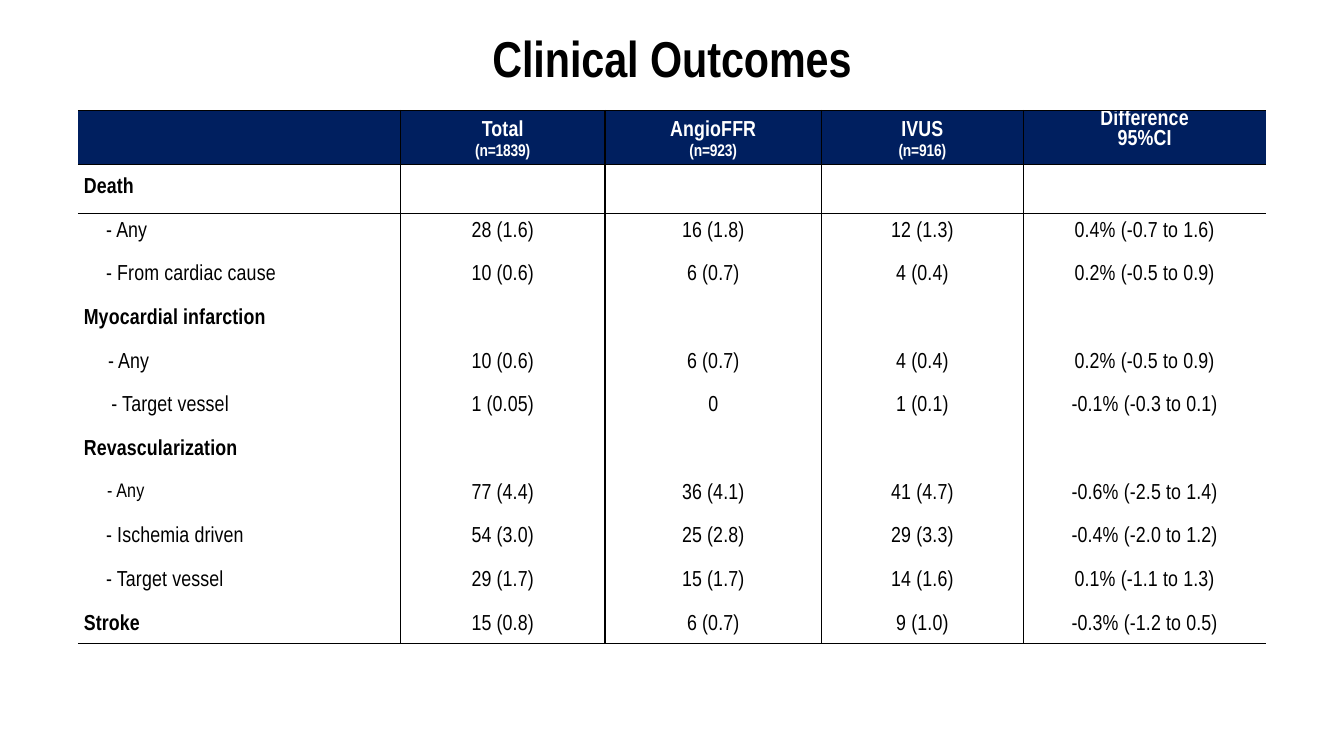
from lxml import etree
from pptx import Presentation
from pptx.dml.color import RGBColor as Rgb
from pptx.enum.text import MSO_ANCHOR as Anchor, PP_ALIGN as Align
from pptx.oxml.ns import qn
from pptx.util import Pt

# Content
TITLE = "Clinical Outcomes"
HEADERS = [
    (),
    ("Total", "(n=1839)"),
    ("AngioFFR", "(n=923)"),
    ("IVUS", "(n=916)"),
    ("Difference", "95%CI"),
]
# Label, label indent, label size, values; a label at GROUP indent is bold
GROUP, ITEM = 4.3, 20.2
BODY_SIZE = 15.5
ROWS = [
    ("Death", GROUP, BODY_SIZE, ()),
    ("- Any", ITEM, BODY_SIZE, ("28 (1.6)", "16 (1.8)", "12 (1.3)", "0.4% (-0.7 to 1.6)")),
    ("- From cardiac cause", ITEM, BODY_SIZE, ("10 (0.6)", "6 (0.7)", "4 (0.4)", "0.2% (-0.5 to 0.9)")),
    ("Myocardial infarction", GROUP, BODY_SIZE, ()),
    ("- Any", 21.6, BODY_SIZE, ("10 (0.6)", "6 (0.7)", "4 (0.4)", "0.2% (-0.5 to 0.9)")),
    ("- Target vessel", 24, BODY_SIZE, ("1 (0.05)", "0", "1 (0.1)", "-0.1% (-0.3 to 0.1)")),
    ("Revascularization", GROUP, BODY_SIZE, ()),
    ("- Any", 20.9, 14, ("77 (4.4)", "36 (4.1)", "41 (4.7)", "-0.6% (-2.5 to 1.4)")),
    ("- Ischemia driven", ITEM, BODY_SIZE, ("54 (3.0)", "25 (2.8)", "29 (3.3)", "-0.4% (-2.0 to 1.2)")),
    ("- Target vessel", ITEM, BODY_SIZE, ("29 (1.7)", "15 (1.7)", "14 (1.6)", "0.1% (-1.1 to 1.3)")),
    ("Stroke", GROUP, BODY_SIZE, ("15 (0.8)", "6 (0.7)", "9 (1.0)", "-0.3% (-1.2 to 0.5)")),
]

# Look
COLORS = {"navy": "001F5F", "white": "FFFFFF", "black": "000000"}
FONT = "Arial Narrow"
NO_STYLE = "{2D5ABB26-0587-4C30-8999-92F81FD0307C}"
COLUMN_WIDTHS = [230.4, 146.2, 154.6, 144.2, 173.3]
ROW_HEIGHTS = [38.4, 35.2] + [31.2] * 9 + [26.6]
TABLE_LEFT, TABLE_TOP = 55.6, 78.9
LAST_ROW, LAST_COLUMN = len(ROWS), len(HEADERS) - 1


def write(para, text, size, color="black", bold=False, align=Align.LEFT, spacing=None, tracking=10):
    para.alignment = align
    if spacing:
        para.line_spacing = Pt(spacing)
    span = para.add_run()
    span.text = text
    for name, value in {"name": FONT, "size": Pt(size), "bold": bold}.items():
        setattr(span.font, name, value)
    span.font.color.rgb = Rgb.from_string(COLORS[color])
    span._r.get_or_add_rPr().set("spc", str(tracking))


def set_margins(target, left=0, top=0):
    for side, value in {"left": left, "top": top, "right": 0, "bottom": 0}.items():
        setattr(target, f"margin_{side}", Pt(value))


def draw_borders(cell, row, column):
    edges = {
        "L": column > 0,
        "R": column < LAST_COLUMN,
        "T": row <= 2,
        "B": row <= 1 or row == LAST_ROW,
    }
    props = cell._tc.get_or_add_tcPr()
    for edge, shown in edges.items():
        line = etree.SubElement(props, qn(f"a:ln{edge}"), w=str(Pt(1) if shown else 0))
        if shown:
            fill = etree.SubElement(line, qn("a:solidFill"))
            etree.SubElement(fill, qn("a:srgbClr"), val=COLORS["black"])
        else:
            etree.SubElement(line, qn("a:noFill"))


deck = Presentation()
deck.slide_width, deck.slide_height = Pt(960), Pt(540)
page = deck.slides.add_slide(deck.slide_layouts[6])

# Title
title = page.shapes.add_textbox(Pt(300), Pt(16.5), Pt(360), Pt(45.5)).text_frame
title.word_wrap = True
title.vertical_anchor = Anchor.MIDDLE
set_margins(title, top=3)
write(title.paragraphs[0], TITLE, 36, bold=True, align=Align.CENTER, tracking=-5)

# Table grid
frame = page.shapes.add_table(
    len(ROW_HEIGHTS), len(COLUMN_WIDTHS), Pt(TABLE_LEFT), Pt(TABLE_TOP),
    Pt(sum(COLUMN_WIDTHS)), Pt(sum(ROW_HEIGHTS)))
table = frame.table
table.first_row = table.horz_banding = False
table._tbl.tblPr.find(qn("a:tableStyleId")).text = NO_STYLE
for column, width in zip(table.columns, COLUMN_WIDTHS):
    column.width = Pt(width)
for row, height in zip(table.rows, ROW_HEIGHTS):
    row.height = Pt(height)
for row in range(LAST_ROW + 1):
    for column in range(LAST_COLUMN + 1):
        cell = table.cell(row, column)
        set_margins(cell)
        draw_borders(cell, row, column)
        cell.fill.solid()
        cell.fill.fore_color.rgb = Rgb.from_string(COLORS["white" if row else "navy"])

# Header row
for column, lines in enumerate(HEADERS):
    cell = table.cell(0, column)
    is_difference = column == LAST_COLUMN
    set_margins(cell, top=0 if is_difference else 2.9)
    for index, text in enumerate(lines):
        body = cell.text_frame
        para = body.add_paragraph() if index else body.paragraphs[0]
        is_count = index == 1 and not is_difference
        write(para, text, 12 if is_count else BODY_SIZE, "white", True, Align.CENTER,
              14.3 if is_count or is_difference else 18.6, -10 if is_count else 10)

# Outcome rows
for row, (label, indent, size, values) in enumerate(ROWS, 1):
    top = 9.4 if row == 1 else 5.7
    for column, text in enumerate((label, *values)):
        cell = table.cell(row, column)
        set_margins(cell, left=0 if column else indent, top=top)
        write(cell.text_frame.paragraphs[0], text, BODY_SIZE if column else size,
              bold=not column and indent == GROUP,
              align=Align.CENTER if column else Align.LEFT)

deck.save("out.pptx")
